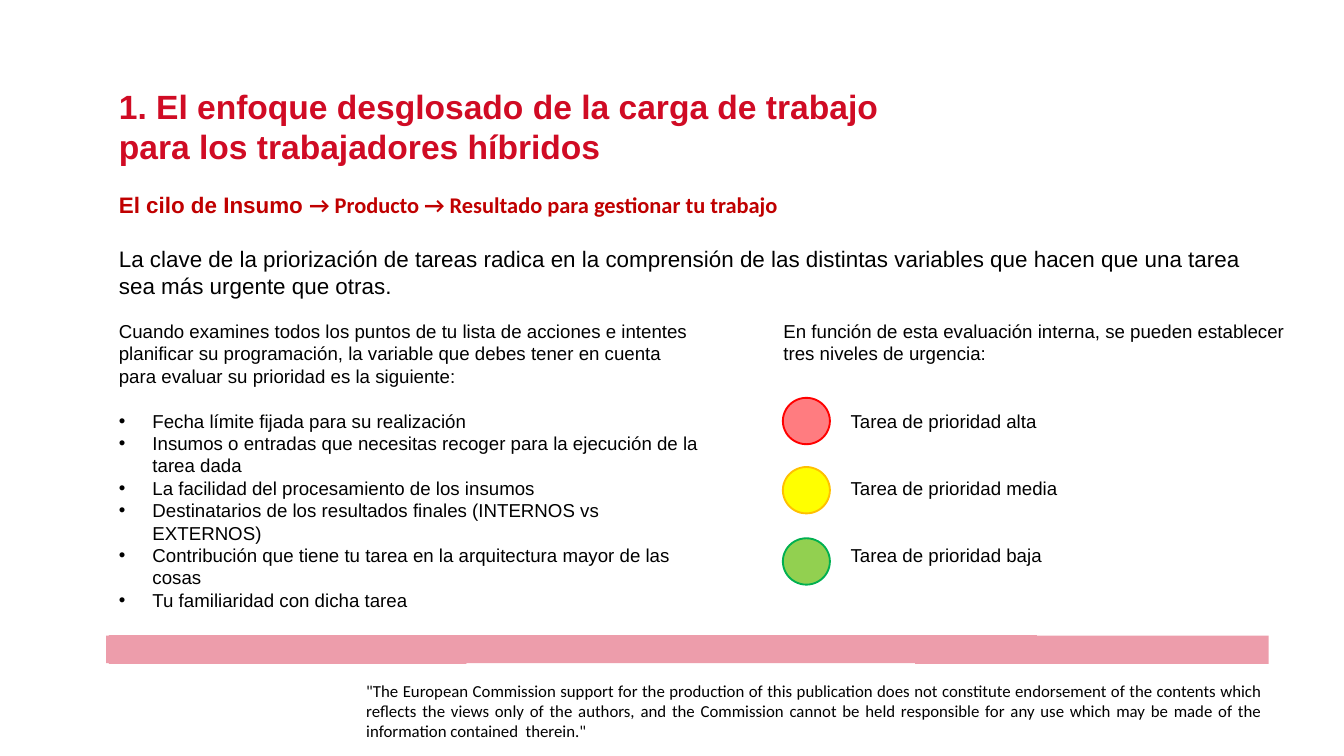
import pptx
import pptx.dml.color
import pptx.enum.shapes
import pptx.enum.text
import pptx.oxml
import pptx.util
import lxml.etree

RGBColor = pptx.dml.color.RGBColor
Pt = pptx.util.Pt
CRIMSON = RGBColor(0xD0, 0x0B, 0x24)
DARK_RED = RGBColor(0xC0, 0x00, 0x00)
BLACK = RGBColor(0x00, 0x00, 0x00)
PINK = RGBColor(0xED, 0x9D, 0xAB)
RED_FILL = RGBColor(0xFF, 0x7C, 0x80)
RED_LINE = RGBColor(0xFF, 0x00, 0x00)
YELLOW_FILL = RGBColor(0xFF, 0xFF, 0x00)
YELLOW_LINE = RGBColor(0xFF, 0xC0, 0x00)
GREEN_FILL = RGBColor(0x92, 0xD0, 0x50)
GREEN_LINE = RGBColor(0x00, 0xB0, 0x50)

presentation = pptx.Presentation()
presentation.slide_width = pptx.util.Inches(20)
presentation.slide_height = pptx.util.Inches(11.25)
slide = presentation.slides.add_slide(presentation.slide_layouts[6])
COLUMN = presentation.slide_width / 200
ROW = presentation.slide_height / 112.5


def set_format(target, values):
    for name, value in values.items():
        setattr(target, name, value)


def add_text(left, top, width, height, size, color, paragraphs, bold=False, font="Arial", **frame_format):
    box = slide.shapes.add_textbox(int(left * COLUMN), int(top * ROW), int(width * COLUMN), int(height * ROW))
    frame = box.text_frame
    set_format(frame, {"word_wrap": True, **frame_format})
    for index, (text, paragraph_format) in enumerate(paragraphs):
        paragraph = frame.paragraphs[0] if index == 0 else frame.add_paragraph()
        set_format(paragraph, paragraph_format)
        run = paragraph.add_run()
        run.text = text
        set_format(run.font, {"size": Pt(size), "name": font, "bold": bold})
        run.font.color.rgb = color
    return frame


bar_points = [
    (188.8, 94.6), (154.3, 94.6), (154.3, 94.5), (16.2, 94.5), (16.2, 94.6), (15.8, 94.6), (15.8, 98.7),
    (16.2, 98.7), (16.2, 98.8), (69.4, 98.8), (69.4, 98.7), (136.2, 98.7), (136.2, 98.8), (188.8, 98.8),
]
corners = [(int(x * COLUMN), int(y * ROW)) for x, y in bar_points]
builder = slide.shapes.build_freeform(*corners[0])
builder.add_line_segments(corners[1:], close=True)
bar = builder.convert_to_shape()
bar.shadow.inherit = False
bar.fill.solid()
bar.fill.fore_color.rgb = PINK
bar.line.fill.background()

add_text(
    54.5, 101.5, 133.3, 7.6, 18, BLACK,
    [("\"The European Commission support for the production of this publication does not constitute "
      "endorsement of the contents which reflects the views only of the authors, and the Commission cannot be "
      "held responsible for any use which may be made of the information contained  therein.\"",
      {"alignment": pptx.enum.text.PP_ALIGN.JUSTIFY, "line_spacing": 0.98})],
    font="Calibri", margin_left=0, margin_top=0, margin_right=0, margin_bottom=0,
)

introduction = add_text(
    16.7, 28, 171.1, 17.2, 24, BLACK,
    [("El cilo de Insumo ", {}),
     ("La clave de la priorización de tareas radica en la comprensión de las distintas variables que hacen que "
      "una tarea sea más urgente que otras.", {"space_before": Pt(28.8)})],
)
heading = introduction.paragraphs[0]
heading.add_run().text = "→ Producto → Resultado para gestionar tu trabajo"
for run, font in zip(heading.runs, ("Arial", "Calibri")):
    set_format(run.font, {"size": Pt(24), "name": font, "bold": True})
    run.font.color.rgb = DARK_RED

variables = [
    "Fecha límite fijada para su realización",
    "Insumos o entradas que necesitas recoger para la ejecución de la tarea dada",
    "La facilidad del procesamiento de los insumos",
    "Destinatarios de los resultados finales (INTERNOS vs EXTERNOS)",
    "Contribución que tiene tu tarea en la arquitectura mayor de las cosas",
    "Tu familiaridad con dicha tarea",
]
variable_list = add_text(
    16.7, 47.1, 88.2, 44.8, 20, BLACK,
    [("Cuando examines todos los puntos de tu lista de acciones e intentes planificar su programación, la "
      "variable que debes tener en cuenta para evaluar su prioridad es la siguiente:", {})]
    + [(text, {"space_before": Pt(0 if index else 24)}) for index, text in enumerate(variables)],
)
for paragraph in variable_list.paragraphs[1:]:
    properties = paragraph._p.get_or_add_pPr()
    properties.set("marL", str(int(5 * COLUMN)))
    properties.set("indent", str(int(-5 * COLUMN)))
    bullet_font = lxml.etree.SubElement(properties, pptx.oxml.ns.qn("a:buFont"))
    bullet_font.set("typeface", "Arial")
    bullet = lxml.etree.SubElement(properties, pptx.oxml.ns.qn("a:buChar"))
    bullet.set("char", "•")

levels = [
    ("Tarea de prioridad alta", 59.2, RED_FILL, RED_LINE),
    ("Tarea de prioridad media", 69.5, YELLOW_FILL, YELLOW_LINE),
    ("Tarea de prioridad baja", 80.1, GREEN_FILL, GREEN_LINE),
]
level_list = add_text(
    115.6, 47.1, 76.7, 38, 20, BLACK,
    [("En función de esta evaluación interna, se pueden establecer tres niveles de urgencia:", {})]
    + [(label, {"space_before": Pt(48)}) for label, *_ in levels],
)
for paragraph in level_list.paragraphs[1:]:
    paragraph._p.get_or_add_pPr().set("marL", str(int(10 * COLUMN)))

for label, top, fill_color, line_color in levels:
    circle = slide.shapes.add_shape(
        pptx.enum.shapes.MSO_SHAPE.OVAL, int(116.5 * COLUMN), int(top * ROW), int(7 * COLUMN), int(6.9 * ROW))
    circle.shadow.inherit = False
    circle.fill.solid()
    circle.fill.fore_color.rgb = fill_color
    circle.line.color.rgb = line_color
    circle.line.width = Pt(2)

add_text(
    16.7, 12.3, 124.1, 13.1, 36, CRIMSON,
    [("1. El enfoque desglosado de la carga de trabajo para los trabajadores híbridos", {})], bold=True,
)

presentation.save("out.pptx")
